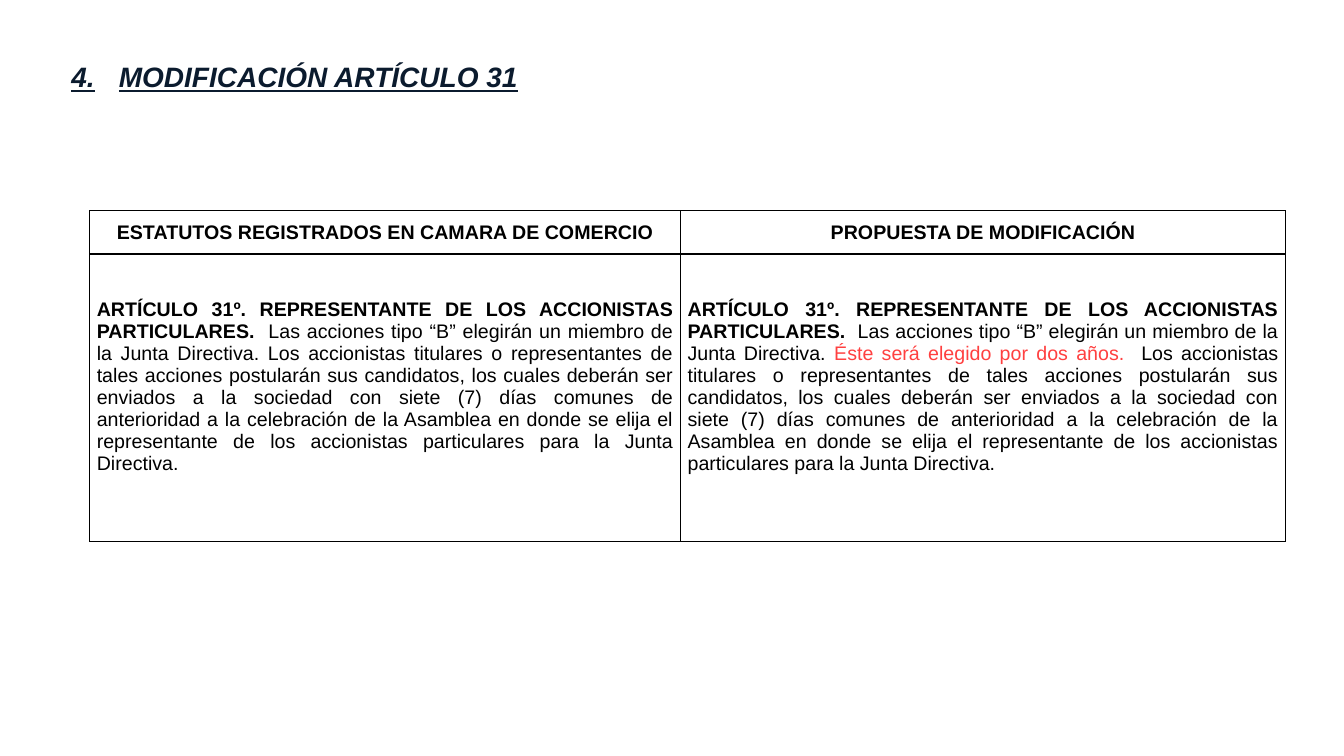
from lxml import etree
from pptx import Presentation
from pptx.dml.color import RGBColor
from pptx.enum import text as t
from pptx.oxml import ns
from pptx.util import Inches, Pt

COLORS = {"title": "0B1B2E", "body": "000000", "change": "FF4040", "border": "000000"}
FONT = "Arial"

TITLE = "4.\tMODIFICACIÓN ARTÍCULO 31"
HEADERS = ["ESTATUTOS REGISTRADOS EN CAMARA DE COMERCIO", "PROPUESTA DE MODIFICACIÓN"]
HEADING = "ARTÍCULO 31º. REPRESENTANTE DE LOS ACCIONISTAS PARTICULARES."
ELECTION = "  Las acciones tipo “B” elegirán un miembro de la Junta Directiva. "
TERM = "Éste será elegido por dos años."
CANDIDATES = (
    "Los accionistas titulares o representantes de tales acciones postularán sus "
    "candidatos, los cuales deberán ser enviados a la sociedad con siete (7) días "
    "comunes de anterioridad a la celebración de la Asamblea en donde se elija el "
    "representante de los accionistas particulares para la Junta Directiva."
)

# Each cell is a list of (wording, bold, color)
header_row = [[(header, True, "body")] for header in HEADERS]
article_row = [
    [(HEADING, True, "body"), (ELECTION + CANDIDATES, False, "body")],
    [(HEADING, True, "body"), (ELECTION, False, "body"),
     (TERM, False, "change"), ("  " + CANDIDATES, False, "body")],
]
# (cells, height, alignment, bottom margin)
ROWS = [
    (header_row, 0.43, t.PP_ALIGN.CENTER, 0),
    (article_row, 2.85, t.PP_ALIGN.JUSTIFY, 0.22),
]
COLUMN_WIDTHS = [5.86, 6]
TABLE_LEFT, TABLE_TOP = 0.89, 2.09


def add_run(paragraph, wording, color, **formats):
    run = paragraph.add_run()
    run.text = wording
    for name, value in {"name": FONT, **formats}.items():
        setattr(run.font, name, value)
    run.font.color.rgb = RGBColor.from_string(COLORS[color])


def add_borders(cell):
    properties = cell._tc.get_or_add_tcPr()
    for side in ("lnL", "lnR", "lnT", "lnB"):
        line = etree.SubElement(properties, ns.qn(f"a:{side}"), w=str(Pt(1)))
        fill = etree.SubElement(line, ns.qn("a:solidFill"))
        etree.SubElement(fill, ns.qn("a:srgbClr"), val=COLORS["border"])


def add_title(slide):
    box = slide.shapes.add_textbox(Inches(0.61), Inches(0.4), Inches(6), Inches(0.58))
    frame = box.text_frame
    frame.word_wrap = True
    frame.vertical_anchor = t.MSO_ANCHOR.BOTTOM
    paragraph = frame.paragraphs[0]
    tabs = etree.SubElement(paragraph._p.get_or_add_pPr(), ns.qn("a:tabLst"))
    etree.SubElement(tabs, ns.qn("a:tab"), pos=str(Inches(0.47)), algn="l")
    paragraph.line_spacing = 0.9
    add_run(paragraph, TITLE, "title", size=Pt(20), bold=True, italic=True, underline=True)


def add_comparison(slide):
    height = sum(row[1] for row in ROWS)
    table = slide.shapes.add_table(
        len(ROWS), len(COLUMN_WIDTHS), Inches(TABLE_LEFT), Inches(TABLE_TOP),
        Inches(sum(COLUMN_WIDTHS)), Inches(height)).table
    table.first_row = table.horz_banding = False
    for column, width in zip(table.columns, COLUMN_WIDTHS):
        column.width = Inches(width)
    for row, (cells, row_height, alignment, bottom) in zip(table.rows, ROWS):
        row.height = Inches(row_height)
        for cell, parts in zip(row.cells, cells):
            layout = {
                "margin_left": Inches(0.07), "margin_right": Inches(0.07),
                "margin_top": 0, "margin_bottom": Inches(bottom),
                "vertical_anchor": t.MSO_ANCHOR.MIDDLE,
            }
            for name, value in layout.items():
                setattr(cell, name, value)
            add_borders(cell)
            cell.fill.background()
            paragraph = cell.text_frame.paragraphs[0]
            paragraph.alignment = alignment
            for wording, bold, color in parts:
                add_run(paragraph, wording, color, size=Pt(14), bold=bold)


def main():
    deck = Presentation()
    deck.slide_width, deck.slide_height = Inches(13.33), Inches(7.5)
    slide = deck.slides.add_slide(deck.slide_layouts[6])
    add_comparison(slide)
    add_title(slide)
    deck.save("out.pptx")


if __name__ == "__main__":
    main()
